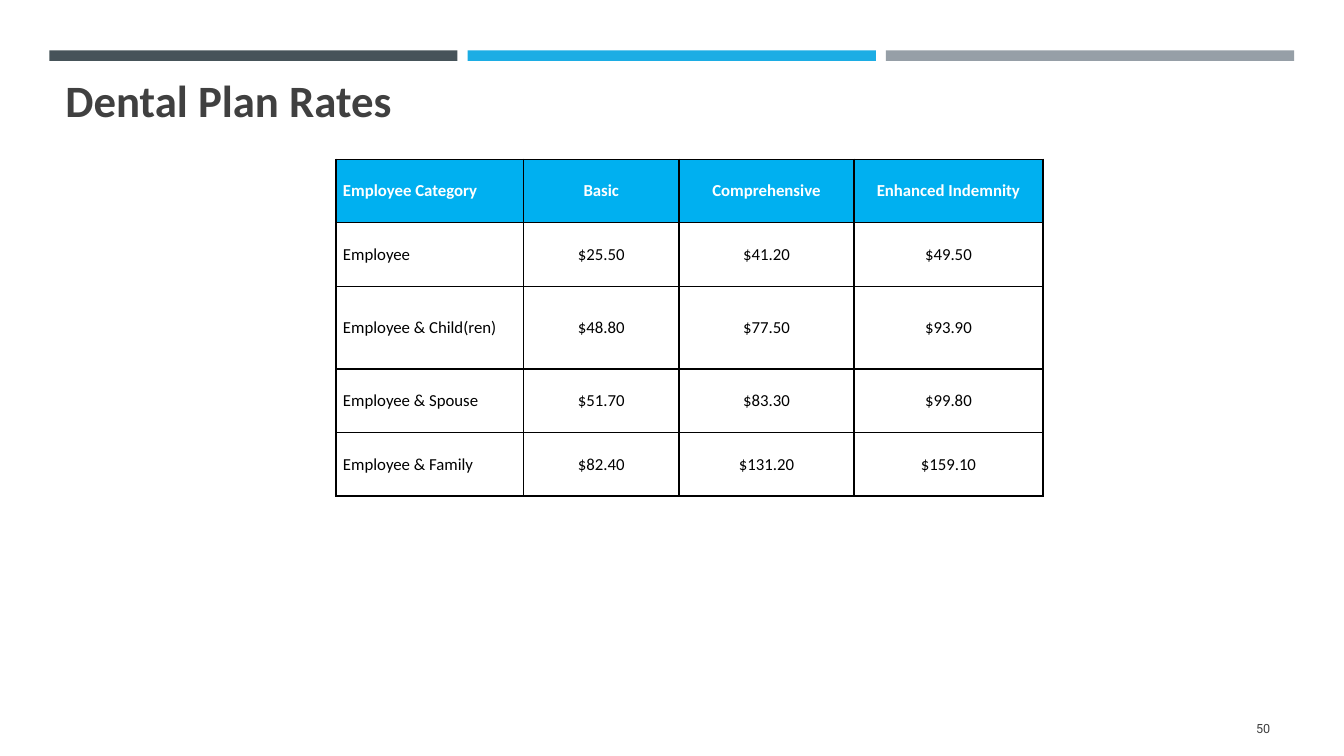
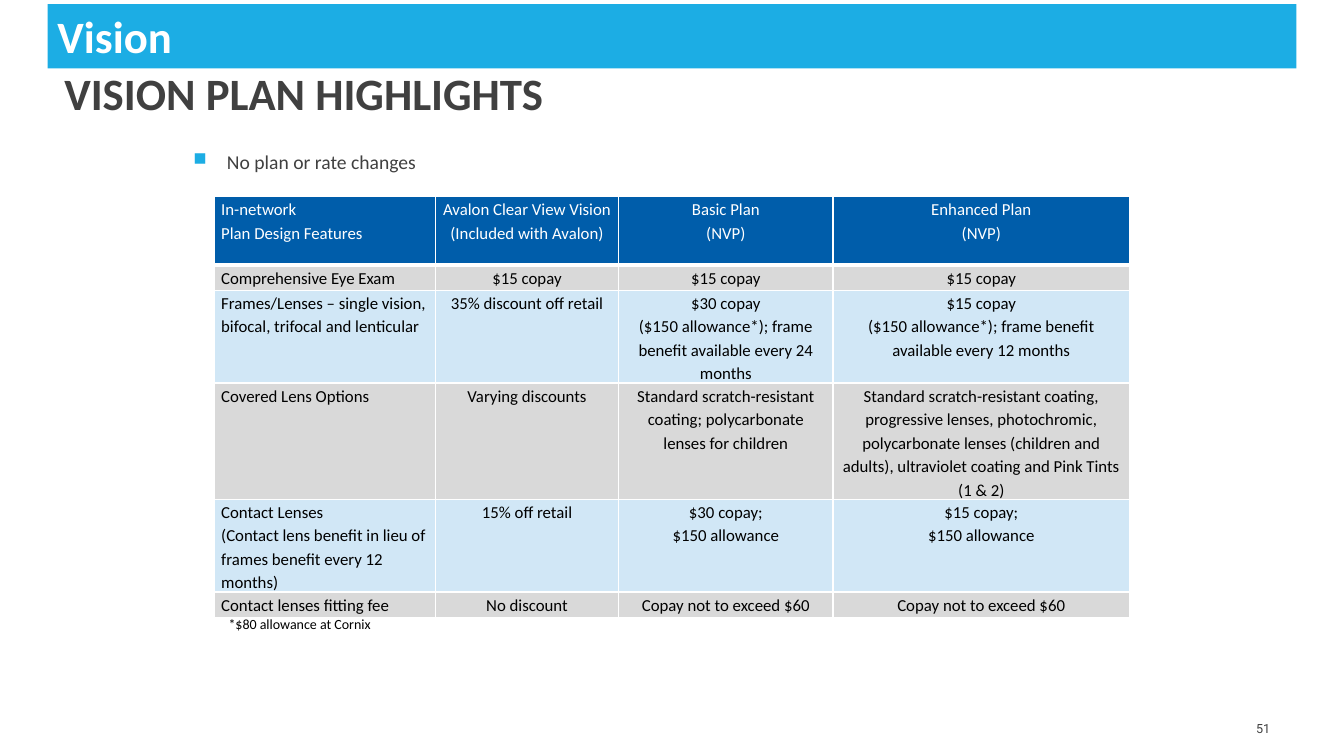
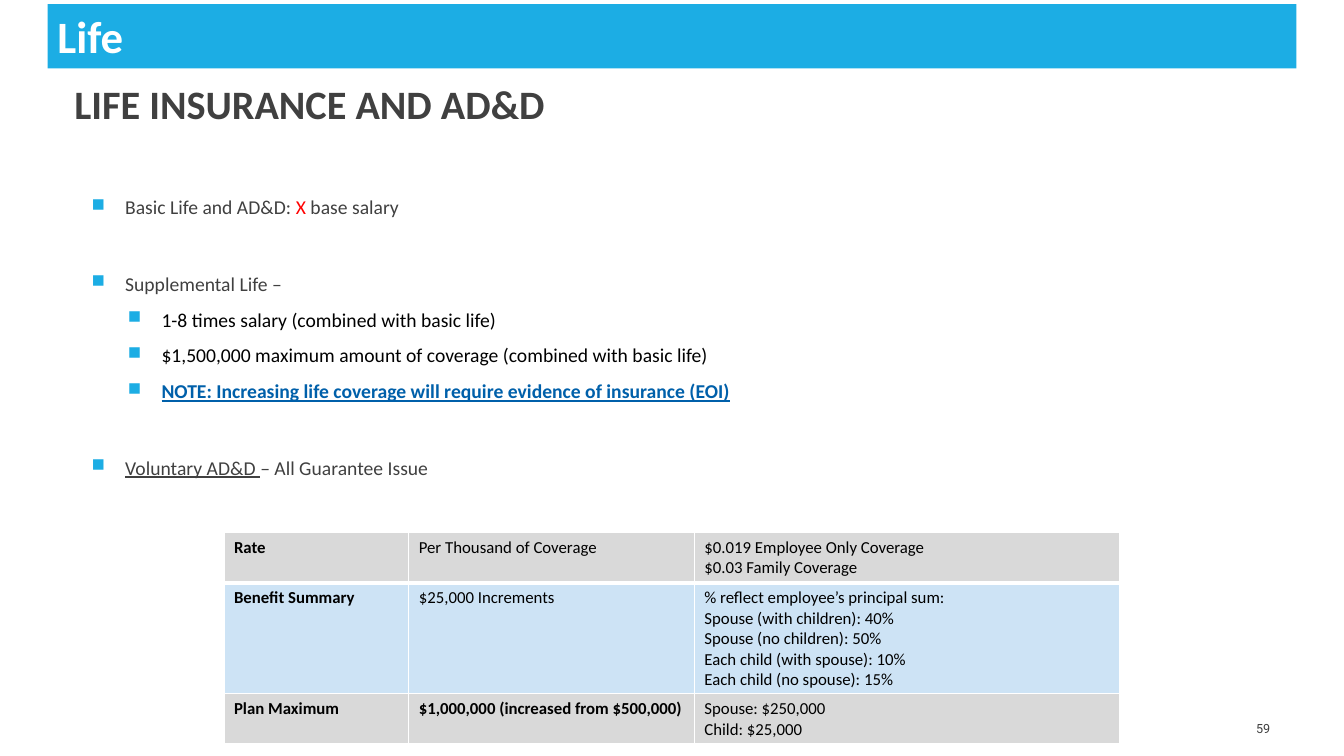
"""Build three employee benefit slides: dental rates, vision plan and life insurance."""
from dataclasses import dataclass, field
from typing import Any, NamedTuple

from lxml import etree
from pptx import Presentation
from pptx.dml.color import RGBColor
from pptx.enum.shapes import MSO_SHAPE
from pptx.enum.text import MSO_ANCHOR, PP_ALIGN
from pptx.oxml.ns import qn
from pptx.util import Pt

RECT = MSO_SHAPE.RECTANGLE
TOP, MIDDLE, BOTTOM = MSO_ANCHOR.TOP, MSO_ANCHOR.MIDDLE, MSO_ANCHOR.BOTTOM
LEFT, CENTER, RIGHT = PP_ALIGN.LEFT, PP_ALIGN.CENTER, PP_ALIGN.RIGHT

WHITE, BLACK, INK = "FFFFFF", "000000", "404040"
SLATE, ACCENT, STEEL = "465359", "1CADE4", "969FA7"
SKY, NAVY, LINK, RED = "00B0F0", "005DAA", "0060AA", "FF0000"
GREY, PALE_VISION, PALE_LIFE = "D9D9D9", "D1E7F6", "CDE3F5"


class Box(NamedTuple):
    x: float
    y: float
    w: float
    h: float


class Run(NamedTuple):
    text: str
    color: str = INK
    size: float = 14
    bold: bool = False
    underline: bool = False
    font: str = "Calibri"


@dataclass
class Para:
    runs: list[Run]
    format: dict[str, Any] = field(default_factory=dict)
    bullet_indent: float = 0


@dataclass
class Grid:
    box: Box
    cols: list[float]
    rows: list[float]
    cells: list[list[str]]
    fills: list[str | None]
    bold: set[tuple[int, int]]
    border: str
    header_color: str = BLACK
    header_rule: float = 1
    other_align: Any = LEFT
    anchor: Any = TOP
    inset: tuple[float, float] = (5, 0)
    line_spacing: float = 1.0


def rgb(color: str) -> RGBColor:
    return RGBColor.from_string(color)


def apply(obj: Any, values: dict[str, Any]) -> None:
    for name, value in values.items():
        setattr(obj, name, value)


def add_bullet(p: Any, indent: float) -> None:
    ppr = p._p.get_or_add_pPr()
    ppr.set("marL", str(Pt(indent)))
    ppr.set("indent", str(-Pt(24)))
    color = etree.SubElement(ppr, qn("a:buClr"))
    etree.SubElement(color, qn("a:srgbClr"), val=ACCENT)
    etree.SubElement(ppr, qn("a:buSzPct"), val="92000")
    etree.SubElement(ppr, qn("a:buChar"), char="■")


def write(tf: Any, paras: list[Para]) -> None:
    for i, para in enumerate(paras):
        p = tf.add_paragraph() if i else tf.paragraphs[0]
        apply(p, para.format)
        if para.bullet_indent:
            add_bullet(p, para.bullet_indent)
        for run in para.runs:
            r = p.add_run()
            r.text = run.text
            apply(r.font, {"name": run.font, "size": Pt(run.size),
                           "bold": run.bold, "underline": run.underline})
            r.font.color.rgb = rgb(run.color)


def add_text(s: Any, box: Box, paras: list[Para], anchor: Any = TOP) -> None:
    tf = s.shapes.add_textbox(*map(Pt, box)).text_frame
    apply(tf, {"word_wrap": True, "vertical_anchor": anchor})
    write(tf, paras)


def add_bar(s: Any, box: Box, color: str) -> Any:
    sp = s.shapes.add_shape(RECT, *map(Pt, box))
    sp.shadow.inherit = False
    sp.fill.solid()
    sp.fill.fore_color.rgb = rgb(color)
    sp.line.fill.background()
    return sp


def add_stripes(s: Any) -> None:
    width, gap = 291.6, 7.2
    for i, color in enumerate((SLATE, ACCENT, STEEL)):
        add_bar(s, Box(35.2 + i * (width + gap), 36, width, 7.5), color)


def add_band(s: Any, text: str) -> None:
    tf = add_bar(s, Box(34, 2.9, 892, 46), ACCENT).text_frame
    apply(tf, {"word_wrap": True, "vertical_anchor": TOP})
    write(tf, [Para([Run(text, WHITE, 32, True)], {"alignment": LEFT})])


def add_title(s: Any, box: Box, text: str, anchor: Any, size: float = 32) -> None:
    add_text(s, box, [Para([Run(text, INK, size, True)])], anchor)


def add_number(s: Any, number: int) -> None:
    run = Run(str(number), size=9, font="Roboto")
    add_text(s, Box(831.6, 506.2, 82.8, 28.8), [Para([run], {"alignment": RIGHT})], MIDDLE)


def bullet(*runs: Run, before: float = 2.8) -> Para:
    spacing = {"line_spacing": 1.1, "space_before": Pt(before), "space_after": Pt(6)}
    return Para(list(runs), spacing, 24)


def sub_bullet(run: Run) -> Para:
    return Para([run], {"space_before": Pt(2.8), "space_after": Pt(6)}, 50)


def set_borders(cell: Any, color: str, bottom: float) -> None:
    tcpr = cell._tc.get_or_add_tcPr()
    for side, width in (("L", 1), ("R", 1), ("T", 1), ("B", bottom)):
        ln = etree.SubElement(tcpr, qn(f"a:ln{side}"), w=str(Pt(width)))
        fill = etree.SubElement(ln, qn("a:solidFill"))
        etree.SubElement(fill, qn("a:srgbClr"), val=color)


def add_grid(s: Any, grid: Grid) -> None:
    frame = s.shapes.add_table(len(grid.rows), len(grid.cols), *map(Pt, grid.box))
    table = frame.table
    apply(table, {"first_row": False, "horz_banding": False})
    for col, width in zip(table.columns, grid.cols):
        col.width = Pt(width)
    for row, height in zip(table.rows, grid.rows):
        row.height = Pt(height)
    side, end = map(Pt, grid.inset)
    for i, texts in enumerate(grid.cells):
        for j, text in enumerate(texts):
            cell = table.cell(i, j)
            apply(cell, {"margin_left": side, "margin_right": side, "margin_top": end,
                         "margin_bottom": end, "vertical_anchor": grid.anchor})
            set_borders(cell, grid.border, 1 if i else grid.header_rule)
            if grid.fills[i]:
                cell.fill.solid()
                cell.fill.fore_color.rgb = rgb(grid.fills[i])
            else:
                cell.fill.background()
            color = BLACK if i else grid.header_color
            layout = {"alignment": grid.other_align if j else LEFT,
                      "line_spacing": grid.line_spacing}
            write(cell.text_frame, [Para([Run(line, color, 12, (i, j) in grid.bold)], layout)
                                    for line in text.split("\n")])


DENTAL = Grid(
    box=Box(240, 113.8, 505, 240),
    cols=[134, 111, 125, 135],
    rows=[45.4, 45.4, 59, 45.4, 45.4],
    cells=[
        ["Employee Category", "Basic", "Comprehensive", "Enhanced Indemnity"],
        ["Employee", "$25.50", "$41.20", "$49.50"],
        ["Employee & Child(ren)", "$48.80", "$77.50", "$93.90"],
        ["Employee & Spouse", "$51.70", "$83.30", "$99.80"],
        ["Employee & Family", "$82.40", "$131.20", "$159.10"],
    ],
    fills=[SKY, None, None, None, None],
    bold={(0, j) for j in range(4)},
    border=BLACK,
    header_color=WHITE,
    other_align=CENTER,
    anchor=MIDDLE,
)

VISION = Grid(
    box=Box(153, 140.4, 654, 300),
    cols=[158, 131, 153, 212],
    rows=[49, 18, 66, 83, 66, 18],
    cells=[
        ["In-network\nPlan Design Features",
         "Avalon Clear View Vision\n(Included with Avalon)",
         "Basic Plan\n(NVP)", "Enhanced Plan\n(NVP)"],
        ["Comprehensive Eye Exam", "$15 copay", "$15 copay", "$15 copay"],
        ["Frames/Lenses – single vision, bifocal, trifocal and lenticular",
         "35% discount off retail",
         "$30 copay\n($150 allowance*); frame benefit available every 24 months",
         "$15 copay\n($150 allowance*); frame benefit available every 12 months"],
        ["Covered Lens Options", "Varying discounts",
         "Standard scratch-resistant coating; polycarbonate lenses for children",
         "Standard scratch-resistant coating, progressive lenses, photochromic, "
         "polycarbonate lenses (children and adults), ultraviolet coating and "
         "Pink Tints (1 & 2)"],
        ["Contact Lenses\n(Contact lens benefit in lieu of frames benefit every 12 months)",
         "15% off retail", "$30 copay;\n$150 allowance", "$15 copay;\n$150 allowance"],
        ["Contact lenses fitting fee", "No discount",
         "Copay not to exceed $60", "Copay not to exceed $60"],
    ],
    fills=[NAVY, GREY, PALE_VISION, GREY, PALE_VISION, GREY],
    bold=set(),
    border=WHITE,
    header_color=WHITE,
    header_rule=3,
    other_align=CENTER,
    line_spacing=1.15,
)

LIFE = Grid(
    box=Box(160, 380.2, 640, 151),
    cols=[132, 204, 304],
    rows=[36, 79, 36],
    cells=[
        ["Rate", "Per Thousand of Coverage",
         "$0.019 Employee Only Coverage\n$0.03 Family Coverage"],
        ["Benefit Summary", "$25,000 Increments",
         "% reflect employee’s principal sum:\nSpouse (with children): 40%\n"
         "Spouse (no children): 50%\nEach child (with spouse): 10%\n"
         "Each child (no spouse): 15%"],
        ["Plan Maximum", "$1,000,000 (increased from $500,000)",
         "Spouse: $250,000\nChild: $25,000"],
    ],
    fills=[GREY, PALE_LIFE, GREY],
    bold={(0, 0), (1, 0), (2, 0), (2, 1)},
    border=WHITE,
    header_rule=3,
    inset=(7.2, 3.6),
)

LIFE_POINTS = [
    bullet(Run("Basic Life and AD&D: "), Run("X", RED), Run(" base salary")),
    bullet(Run("Supplemental Life –"), before=30),
    sub_bullet(Run("1-8 times salary (combined with basic life)", BLACK)),
    sub_bullet(Run("$1,500,000 maximum amount of coverage (combined with basic life)", BLACK)),
    sub_bullet(Run("NOTE: Increasing life coverage will require evidence of insurance (EOI)",
                   LINK, bold=True, underline=True)),
    bullet(Run("Voluntary AD&D ", underline=True), Run("– All Guarantee Issue"), before=30),
]


def build_dental(s: Any) -> None:
    add_stripes(s)
    add_title(s, Box(39.6, 53.3, 592, 36), "Dental Plan Rates", MIDDLE)
    add_grid(s, DENTAL)
    add_number(s, 50)


def build_vision(s: Any) -> None:
    add_title(s, Box(38.9, 43.2, 621, 46), "VISION PLAN HIGHLIGHTS", BOTTOM)
    add_grid(s, VISION)
    add_text(s, Box(156.2, 436.3, 186, 19.4),
             [Para([Run("*$80 allowance at Cornix", BLACK, 10)])])
    add_text(s, Box(131, 81.4, 662, 66.2), [bullet(Run("No plan or rate changes"))], MIDDLE)
    add_band(s, "Vision")
    add_number(s, 51)


def build_life(s: Any) -> None:
    add_title(s, Box(46, 54, 600, 41), "LIFE INSURANCE AND AD&D", BOTTOM, 28.8)
    add_text(s, Box(58.3, 134.3, 856, 222), LIFE_POINTS)
    add_grid(s, LIFE)
    add_band(s, "Life")
    add_number(s, 59)


def main() -> None:
    prs = Presentation()
    apply(prs, {"slide_width": Pt(960), "slide_height": Pt(540)})
    for build in (build_dental, build_vision, build_life):
        build(prs.slides.add_slide(prs.slide_layouts[6]))
    prs.save("out.pptx")


if __name__ == "__main__":
    main()
